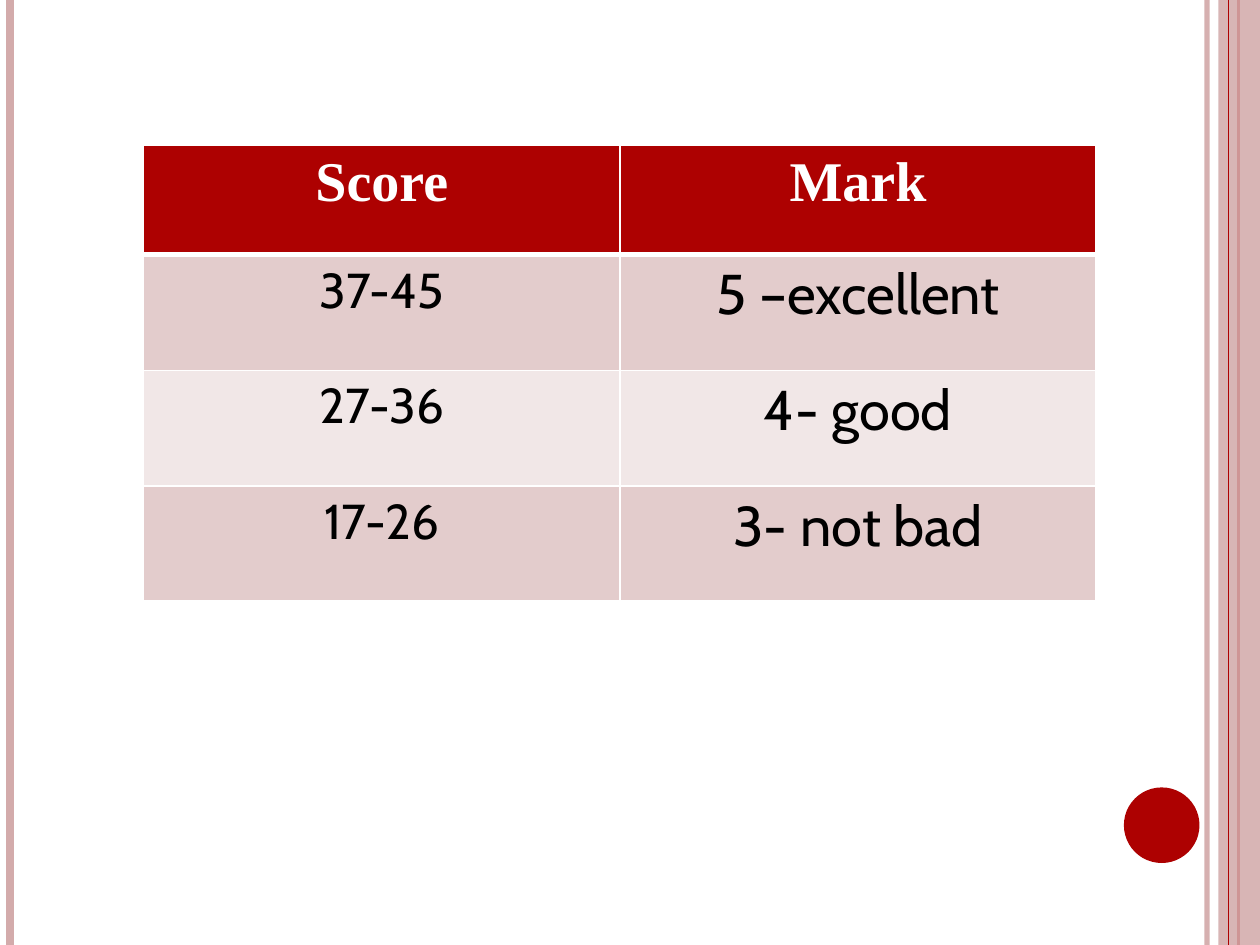
import lxml.etree
import pptx
import pptx.dml.color
import pptx.enum.shapes
import pptx.enum.text
import pptx.oxml.ns
import pptx.util

RGB = pptx.dml.color.RGBColor.from_string
SHAPE = pptx.enum.shapes.MSO_SHAPE
qn = pptx.oxml.ns.qn
THEME = {
    "accent": "AD0101", "rose": "D3ABAB", "white": "FFFFFF", "black": "000000",
    "bands": ("E3CCCC", "F1E7E7"),
    "head_font": "Times New Roman", "body_font": "Cabin",
    "large": 32, "small": 28,
}

prs = pptx.Presentation()
prs.slide_width, prs.slide_height = pptx.util.Inches(10), pptx.util.Inches(7.5)
W, H = prs.slide_width, prs.slide_height
s = prs.slides.add_slide(prs.slide_layouts[6])


def set_alpha(sp, percent):
    """Make the first solid colour of a shape or line partly transparent."""
    color = next(sp._element.spPr.iter(qn("a:srgbClr")))
    lxml.etree.SubElement(color, qn("a:alpha"), val=str(percent * 1000))


def add_rule(x, color, width, alpha=100):
    """Draw a full-height vertical line at a share of the slide width."""
    line = s.shapes.add_connector(
        pptx.enum.shapes.MSO_CONNECTOR.STRAIGHT, int(x * W), 0, int(x * W), H)
    line.line.color.rgb = RGB(THEME[color])
    line.line.width = pptx.util.Pt(width)
    if alpha < 100:
        set_alpha(line, alpha)
    lxml.etree.SubElement(line._element.spPr, qn("a:effectLst"))


# Side rules, with the translucent band over the first three
for rule in ((0.958, "rose", 3, 93), (0.008, "rose", 4.5), (0.983, "accent", 1.5)):
    add_rule(*rule)

band = s.shapes.add_shape(SHAPE.RECTANGLE, int(0.967 * W), 0, int(0.033 * W), H)
add_rule(0.975, "accent", 0.75)
disc = s.shapes.add_shape(
    SHAPE.OVAL, int(0.892 * W), int(0.8333 * H), int(0.06 * W), int(0.08 * H))
for sp, color in ((band, "rose"), (disc, "accent")):
    sp.shadow.inherit = False
    sp.fill.solid()
    sp.fill.fore_color.rgb = RGB(THEME[color])
    sp.line.fill.background()
set_alpha(band, 87)

# Score table
rows = (
    ("Score", "Mark"),
    ("37-45", "5 –excellent"),
    ("27-36", "4- good"),
    ("17-26", "3- not bad"),
)
row_heights = (0.87, 0.92, 0.92, 0.91)
table = s.shapes.add_table(
    len(rows), 2, int(0.114 * W), int(0.1533 * H),
    int(0.756 * W), pptx.util.Inches(sum(row_heights))).table
table.horz_banding = False

for i, texts in enumerate(rows):
    table.rows[i].height = pptx.util.Inches(row_heights[i])
    head = i == 0
    for j, text in enumerate(texts):
        cell = table.cell(i, j)
        tcPr = cell._tc.get_or_add_tcPr()
        for side in "LRTB":
            # The rule between heading and body is thicker
            thick = (i, side) in ((0, "B"), (1, "T"))
            ln = lxml.etree.SubElement(
                tcPr, qn(f"a:ln{side}"), w=str(pptx.util.Pt(3 if thick else 1)))
            fill = lxml.etree.SubElement(ln, qn("a:solidFill"))
            lxml.etree.SubElement(fill, qn("a:srgbClr"), val=THEME["white"])
        cell.fill.solid()
        cell.fill.fore_color.rgb = RGB(
            THEME["accent"] if head else THEME["bands"][(i - 1) % 2])
        p = cell.text_frame.paragraphs[0]
        p.alignment = pptx.enum.text.PP_ALIGN.CENTER
        r = p.add_run()
        r.text = text
        font_format = {
            "name": THEME["head_font" if head else "body_font"],
            "size": pptx.util.Pt(THEME["large" if head or j else "small"]),
            "bold": head,
        }
        for name, value in font_format.items():
            setattr(r.font, name, value)
        r.font.color.rgb = RGB(THEME["white" if head else "black"])

prs.save("out.pptx")
